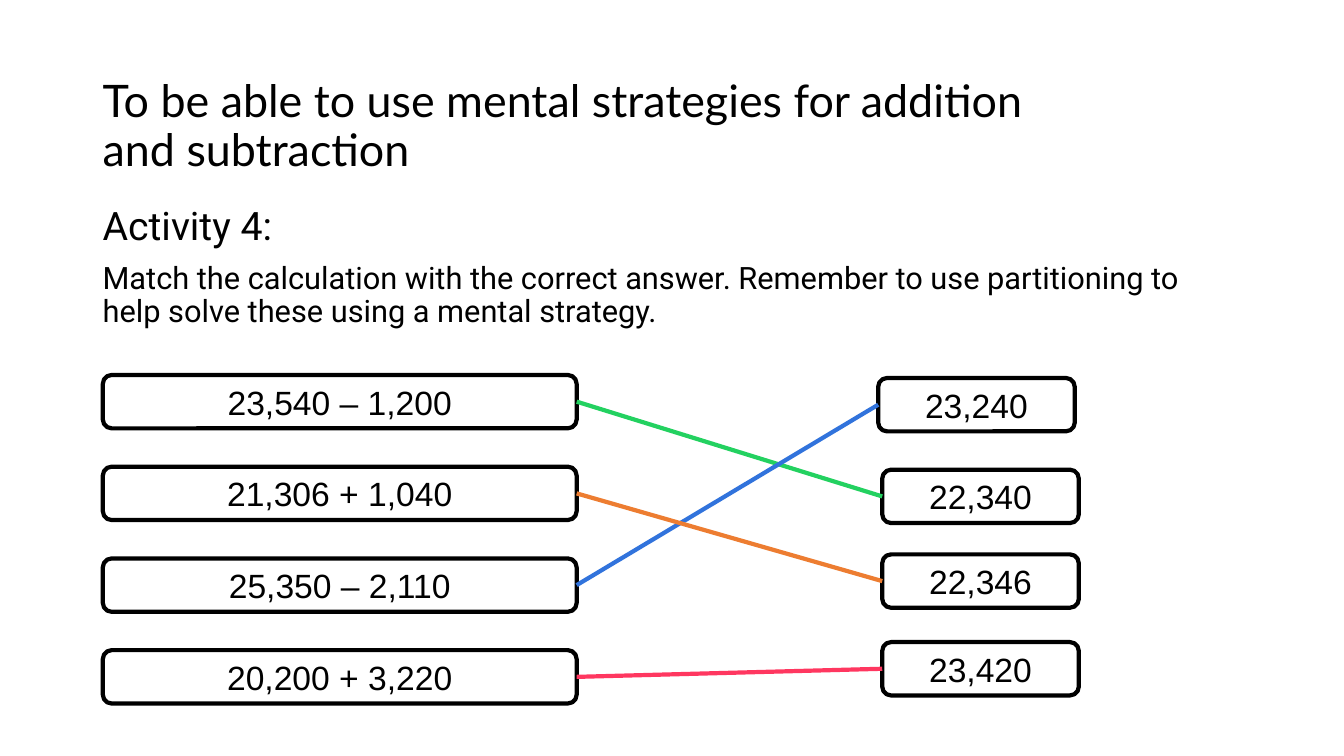
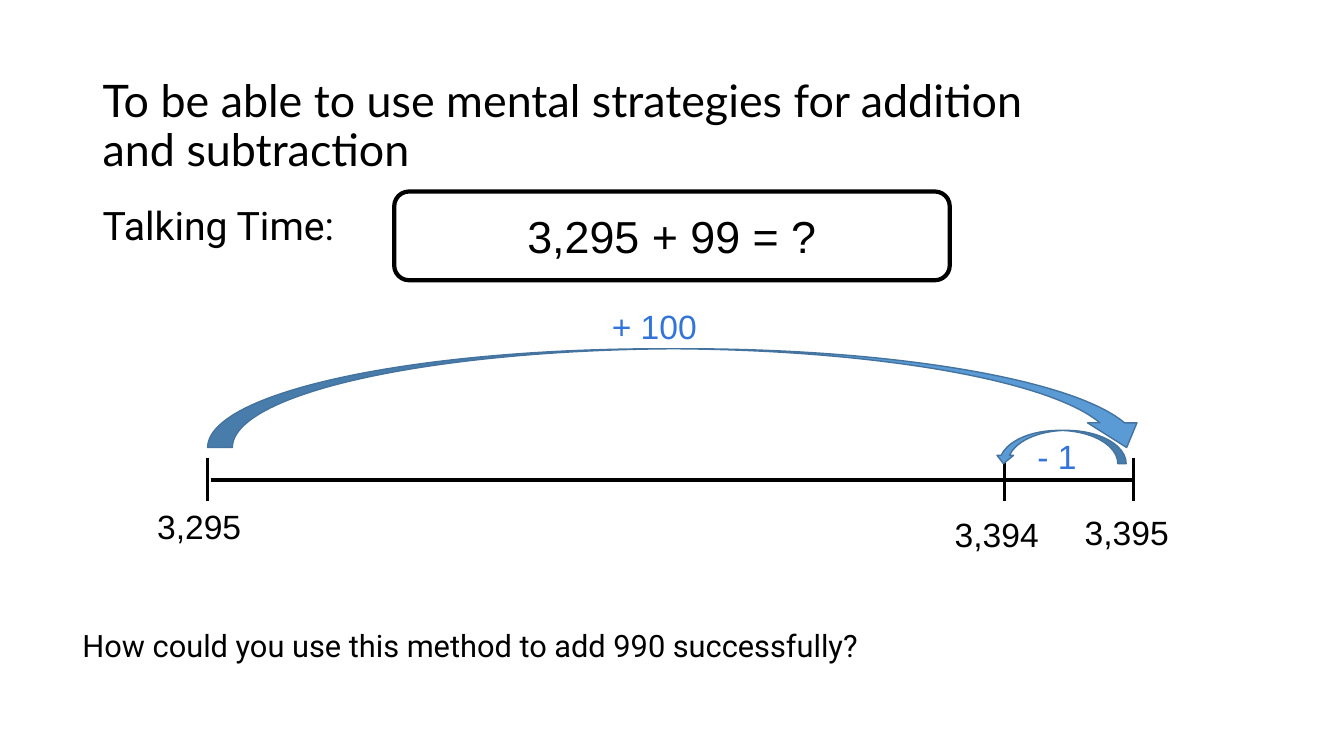
from lxml.etree import SubElement
from pptx import Presentation
from pptx.dml.color import RGBColor
from pptx.enum.shapes import MSO_CONNECTOR, MSO_SHAPE
from pptx.enum.text import MSO_ANCHOR as Anchor, PP_ALIGN as Align
from pptx.oxml.ns import qn
from pptx.util import Inches, Pt

BLACK = RGBColor(0x00, 0x00, 0x00)
WHITE = RGBColor(0xFF, 0xFF, 0xFF)
GREEN = RGBColor(0x23, 0xD1, 0x60)
BLUE = RGBColor(0x31, 0x73, 0xDC)
ORANGE = RGBColor(0xED, 0x7D, 0x31)
PINK = RGBColor(0xFF, 0x37, 0x60)
JUMP_BLUE = RGBColor(0x32, 0x73, 0xDC)
ARROW_FILL = RGBColor(0x5B, 0x9B, 0xD5)
ARROW_LINE = RGBColor(0x43, 0x73, 0x9E)


class Lesson:
    """Holds the lesson style and the slide being built."""

    TITLE = "To be able to use mental strategies for addition and subtraction"
    TITLE_FONT, BODY_FONT, NUMBER_FONT = "Lato", "Roboto", "Arial"

    def __init__(self):
        self.deck = Presentation()
        self.deck.slide_width = Inches(13.33)
        self.deck.slide_height = Inches(7.5)

    def start(self, heading, *instructions):
        self.slide = self.deck.slides.add_slide(self.deck.slide_layouts[6])
        title = self.text(0.92, 0.54, 9.6, 1.45, self.TITLE, 32, self.TITLE_FONT)
        title.vertical_anchor = Anchor.MIDDLE
        title.paragraphs[0].line_spacing = 0.9
        body = self.text(0.92, 2, 11.5, 1.6, heading, 28, self.BODY_FONT)
        body.paragraphs[0].line_spacing = 0.9
        for instruction in instructions:
            paragraph = body.add_paragraph()
            paragraph.line_spacing = 0.9
            paragraph.space_before = Pt(10)
            self.set_words(paragraph, instruction, 22, self.BODY_FONT)

    def set_words(self, paragraph, words, size, font, color=BLACK):
        paragraph.text = words
        paragraph.font.size = Pt(size)
        paragraph.font.name = font
        paragraph.font.color.rgb = color

    def text(self, left, top, width, height, words, size=24, font=NUMBER_FONT, color=BLACK):
        box = self.slide.shapes.add_textbox(
            Inches(left), Inches(top), Inches(width), Inches(height))
        frame = box.text_frame
        frame.word_wrap = True
        self.set_words(frame.paragraphs[0], words, size, font, color)
        return frame

    def shape(self, kind, left, top, width, height, fill, line, weight):
        shape = self.slide.shapes.add_shape(
            kind, Inches(left), Inches(top), Inches(width), Inches(height))
        shape.shadow.inherit = False
        shape.fill.solid()
        shape.fill.fore_color.rgb = fill
        shape.line.color.rgb = line
        shape.line.width = Pt(weight)
        return shape

    def card(self, left, top, width, height, words, size=24):
        card = self.shape(MSO_SHAPE.ROUNDED_RECTANGLE, left, top, width, height, WHITE, BLACK, 3)
        frame = card.text_frame
        frame.word_wrap = True
        frame.vertical_anchor = Anchor.MIDDLE
        frame.paragraphs[0].alignment = Align.CENTER
        self.set_words(frame.paragraphs[0], words, size, self.NUMBER_FONT)
        return card

    def line(self, x1, y1, x2, y2, color=BLACK, weight=3):
        line = self.slide.shapes.add_connector(
            MSO_CONNECTOR.STRAIGHT, Inches(x1), Inches(y1), Inches(x2), Inches(y2))
        line.line.color.rgb = color
        line.line.width = Pt(weight)
        SubElement(line.element.spPr, qn("a:effectLst"))
        return line

    def match(self, calculation, answer, color):
        link = self.line(0, 0, 1, 1, color)
        link.begin_connect(calculation, 3)
        link.end_connect(answer, 1)

    def jump(self, left, top, width, height, backwards=False):
        arrow = self.shape(MSO_SHAPE.CURVED_DOWN_ARROW, left, top, width, height,
                           ARROW_FILL, ARROW_LINE, 1)
        if backwards:
            arrow.element.spPr.xfrm.set("flipH", "1")


def build_matching(lesson):
    lesson.start(
        "Activity 4:",
        "Match the calculation with the correct answer. Remember to use "
        "partitioning to help solve these using a mental strategy.")
    calculations = ["23,540 – 1,200", "21,306 + 1,040", "25,350 – 2,110", "20,200 + 3,220"]
    answers = [("23,240", 8.71, 3.75), ("22,340", 8.75, 4.66),
               ("22,346", 8.75, 5.5), ("23,420", 8.75, 6.37)]
    calculation_cards = [lesson.card(1.02, 3.72 + 0.91 * row, 4.7, 0.53, words)
                         for row, words in enumerate(calculations)]
    answer_cards = [lesson.card(left, top, 1.95, 0.53, words) for words, left, top in answers]
    for calculation, answer, color in [(3, 3, PINK), (0, 1, GREEN), (2, 0, BLUE), (1, 2, ORANGE)]:
        lesson.match(calculation_cards[calculation], answer_cards[answer], color)


def build_number_line(lesson):
    lesson.start("Talking Time:")
    lesson.card(3.91, 1.9, 5.51, 0.88, "3,295 + 99 = ?", 32)
    lesson.line(2.09, 4.76, 11.24, 4.76)
    for number, tick, left, top in [("3,295", 2.06, 1.46, 4.97),
                                    ("3,394", 9.96, 9.37, 5.05),
                                    ("3,395", 11.24, 10.66, 5.03)]:
        lesson.line(tick, 4.54, tick, 4.97, weight=2.25)
        lesson.text(left, top, 1.18, 0.5, number)
    lesson.jump(2.06, 3.46, 9.36, 0.98)
    lesson.text(5.97, 2.99, 1.53, 0.5, "+ 100", color=JUMP_BLUE)
    lesson.jump(9.87, 4.27, 1.3, 0.33, backwards=True)
    lesson.text(10.19, 4.28, 0.82, 0.5, "- 1", color=JUMP_BLUE)
    lesson.text(0.72, 6.17, 12.23, 0.77,
                "How could you use this method to add 990 successfully?", 22, lesson.BODY_FONT)


def main():
    lesson = Lesson()
    build_matching(lesson)
    build_number_line(lesson)
    lesson.deck.save("out.pptx")


if __name__ == "__main__":
    main()
